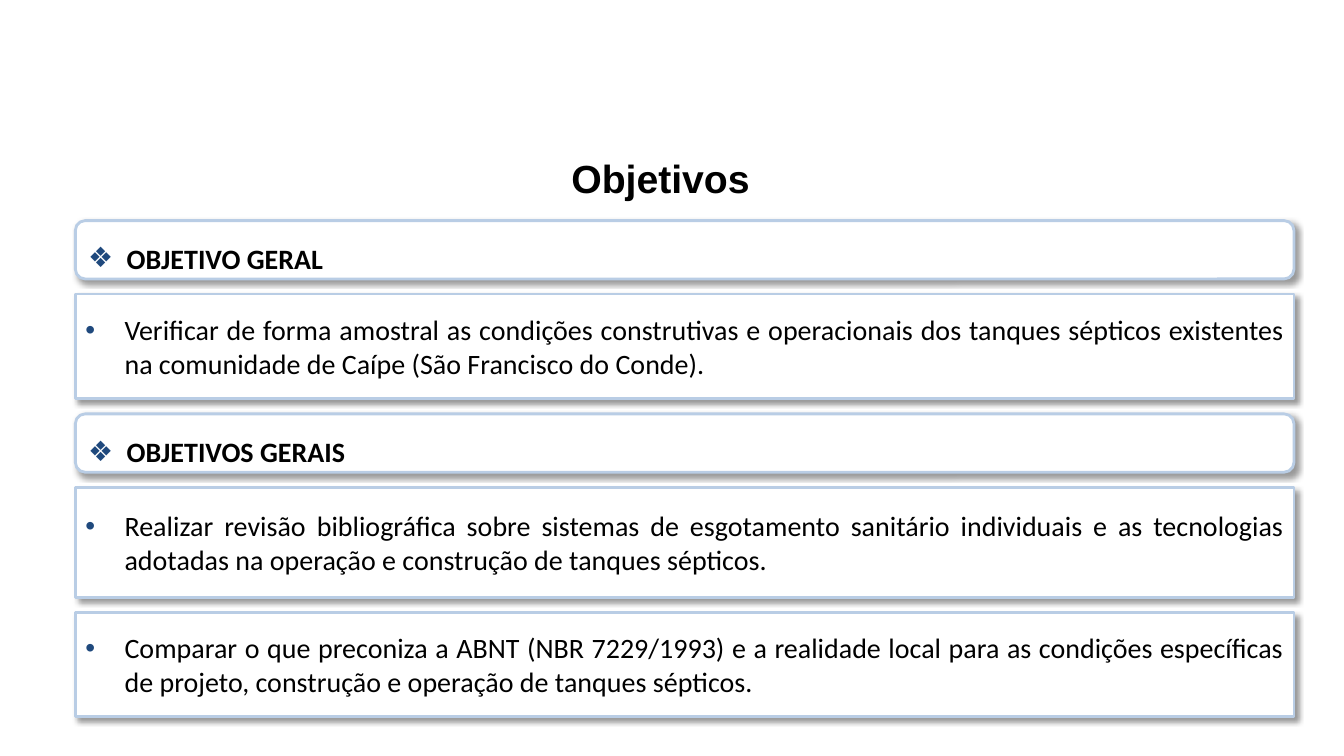
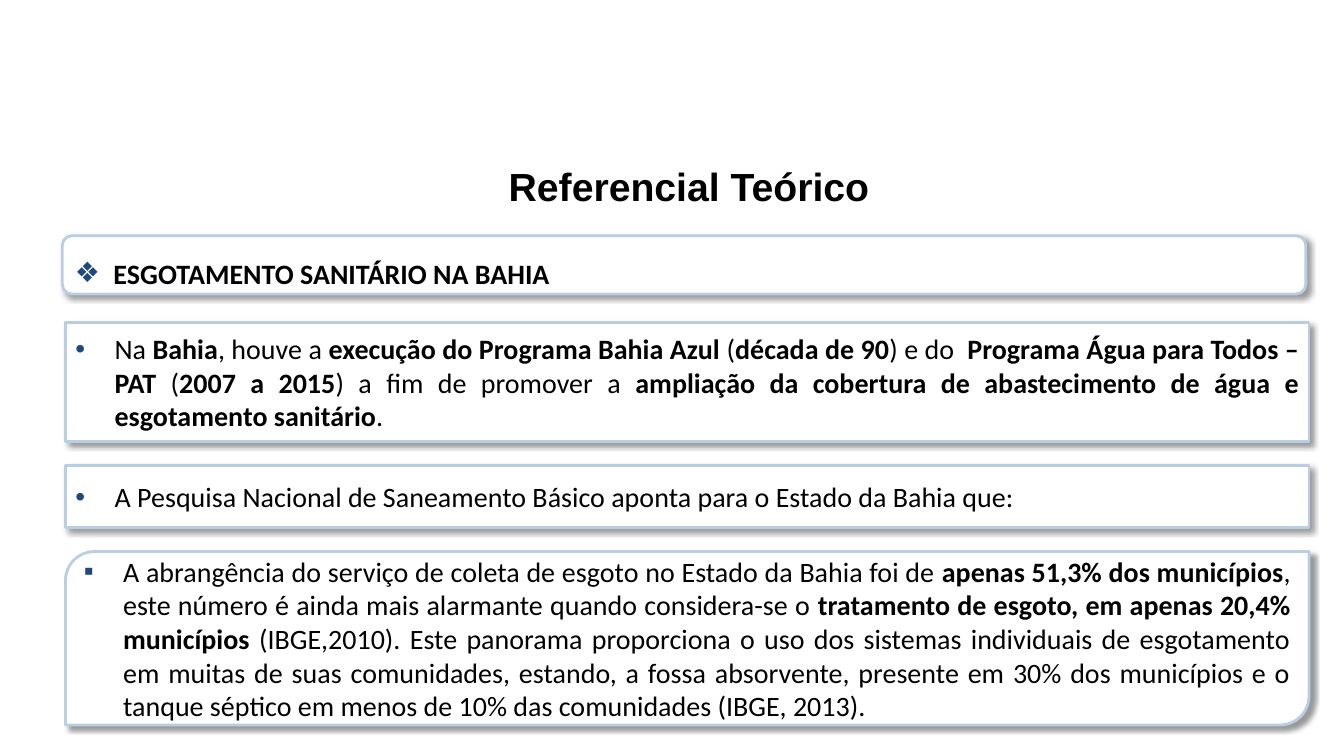
from dataclasses import dataclass

from pptx import Presentation
from pptx.dml.color import RGBColor as RGB
from pptx.enum.shapes import MSO_SHAPE as SHAPE
from pptx.enum.text import MSO_ANCHOR as ANCHOR, MSO_AUTO_SIZE as AUTO_SIZE, PP_ALIGN as ALIGN
from pptx.oxml import parse_xml
from pptx.oxml.ns import nsdecls, qn
from pptx.util import Cm, Pt


@dataclass(frozen=True)
class Theme:
    ink: str = "000000"
    panel: str = "FFFFFF"
    border: str = "B9CDE5"
    bullet: str = "1F497D"
    title_font: str = "Arial"
    body_font: str = "Calibri"
    title_size: int = 28
    body_size: int = 20
    border_width: int = 2


@dataclass(frozen=True)
class Style:
    shape: SHAPE
    bullet: str
    indent: float
    line_spacing: float = 1.0
    bold: bool = False


theme = Theme()
HEADING = Style(SHAPE.ROUNDED_RECTANGLE, "❖", 0.97, line_spacing=1.5, bold=True)
BODY = Style(SHAPE.RECTANGLE, "•", 0.99)
DETAIL = Style(SHAPE.ROUND_2_DIAG_RECTANGLE, "▪", 0.99)
HEADING_HEIGHT = 1.47

# Lengths in cm. A stack is (left, top, width, gap, panels);
# a panel is (style, height, text), with **bold** passages marked in the text.
PAGES = [
    ("Objetivos", (14.15, 3.76, 5.05), [
        (1.9, 5.56, 30.71, 0.38, [
            (HEADING, HEADING_HEIGHT, "OBJETIVO GERAL"),
            (BODY, 2.64, "Verificar de forma amostral as condições construtivas e operacionais "
             "dos tanques sépticos existentes na comunidade de Caípe (São Francisco do Conde)."),
            (HEADING, HEADING_HEIGHT, "OBJETIVOS GERAIS"),
            (BODY, 2.77, "Realizar revisão bibliográfica sobre sistemas de esgotamento sanitário "
             "individuais e as tecnologias adotadas na operação e construção de tanques sépticos."),
            (BODY, 2.62, "Comparar o que preconiza a ABNT (NBR 7229/1993) e a realidade local "
             "para as condições específicas de projeto, construção e operação de tanques sépticos."),
        ]),
    ]),
    ("Referencial Teórico", (12.57, 3.96, 9.7), [
        (1.57, 5.94, 31.34, 0, [
            (HEADING, HEADING_HEIGHT, "ESGOTAMENTO SANITÁRIO NA BAHIA"),
        ]),
        (1.65, 8.13, 31.34, 0.6, [
            (BODY, 3.0, "Na **Bahia**, houve a **execução do Programa Bahia Azul** "
             "(**década de 90**) e do  **Programa Água para Todos – PAT **(**2007 a 2015**) "
             "a fim de promover a **ampliação da cobertura de abastecimento de água e "
             "esgotamento sanitário**."),
            (BODY, 1.57, "A Pesquisa Nacional de Saneamento Básico aponta para o Estado da "
             "Bahia que:"),
            (DETAIL, 4.37, "A abrangência do serviço de coleta de esgoto no Estado da Bahia foi "
             "de **apenas 51,3% dos municípios**, este número é ainda mais alarmante quando "
             "considera-se o **tratamento de esgoto, em apenas 20,4% municípios **(IBGE,2010). "
             "Este panorama proporciona o uso dos sistemas individuais de esgotamento em muitas "
             "de suas comunidades, estando, a fossa absorvente, presente em 30% dos municípios "
             "e o tanque séptico em menos de 10% das comunidades (IBGE, 2013)."),
        ]),
    ]),
]


def style_font(font, name, size, bold):
    font.name, font.size, font.bold = name, Pt(size), bold
    font.color.rgb = RGB.from_string(theme.ink)


def add_panel(page, style, left, top, width, height, text):
    """Add a bordered, shadowed box with one bulleted, justified paragraph."""
    box = page.shapes.add_shape(style.shape, Cm(left), Cm(top), Cm(width), Cm(height))
    box.fill.solid()
    box.fill.fore_color.rgb = RGB.from_string(theme.panel)
    box.line.color.rgb = RGB.from_string(theme.border)
    box.line.width = Pt(theme.border_width)
    box.shadow.inherit = False
    box._element.spPr.find(qn("a:effectLst")).append(parse_xml(
        f'<a:outerShdw {nsdecls("a")} blurRad="{Pt(4)}" dist="{Pt(3)}" dir="2700000" '
        f'algn="tl" rotWithShape="0"><a:srgbClr val="{theme.ink}"><a:alpha val="40000"/>'
        '</a:srgbClr></a:outerShdw>'))

    frame = box.text_frame
    frame.word_wrap = True
    frame.vertical_anchor = ANCHOR.MIDDLE
    para = frame.paragraphs[0]
    properties = para._p.get_or_add_pPr()
    properties.set("marL", str(Cm(style.indent)))
    properties.set("indent", str(-Cm(style.indent)))
    for bullet_part in (
        f'<a:buClr {nsdecls("a")}><a:srgbClr val="{theme.bullet}"/></a:buClr>',
        f'<a:buFont {nsdecls("a")} typeface="Arial"/>',
        f'<a:buChar {nsdecls("a")} char="{style.bullet}"/>',
    ):
        properties.append(parse_xml(bullet_part))
    para.alignment = ALIGN.JUSTIFY
    para.line_spacing = style.line_spacing
    for index, passage in enumerate(text.split("**")):
        span = para.add_run()
        span.text = passage
        style_font(span.font, theme.body_font, theme.body_size, style.bold or index % 2 == 1)


deck = Presentation()
deck.slide_width, deck.slide_height = Cm(33.87), Cm(19.05)
blank = deck.slide_layouts[6]

for title, (title_left, title_top, title_width), stacks in PAGES:
    page = deck.slides.add_slide(blank)
    title_box = page.shapes.add_textbox(
        Cm(title_left), Cm(title_top), Cm(title_width), Cm(1.45))
    title_box.text_frame.text = title
    title_box.text_frame.word_wrap = False
    title_box.text_frame.auto_size = AUTO_SIZE.SHAPE_TO_FIT_TEXT
    style_font(title_box.text_frame.paragraphs[0].runs[0].font,
               theme.title_font, theme.title_size, True)

    for left, top, width, gap, panels in stacks:
        for style, height, text in panels:
            add_panel(page, style, left, top, width, height, text)
            top += height + gap

deck.save("out.pptx")
